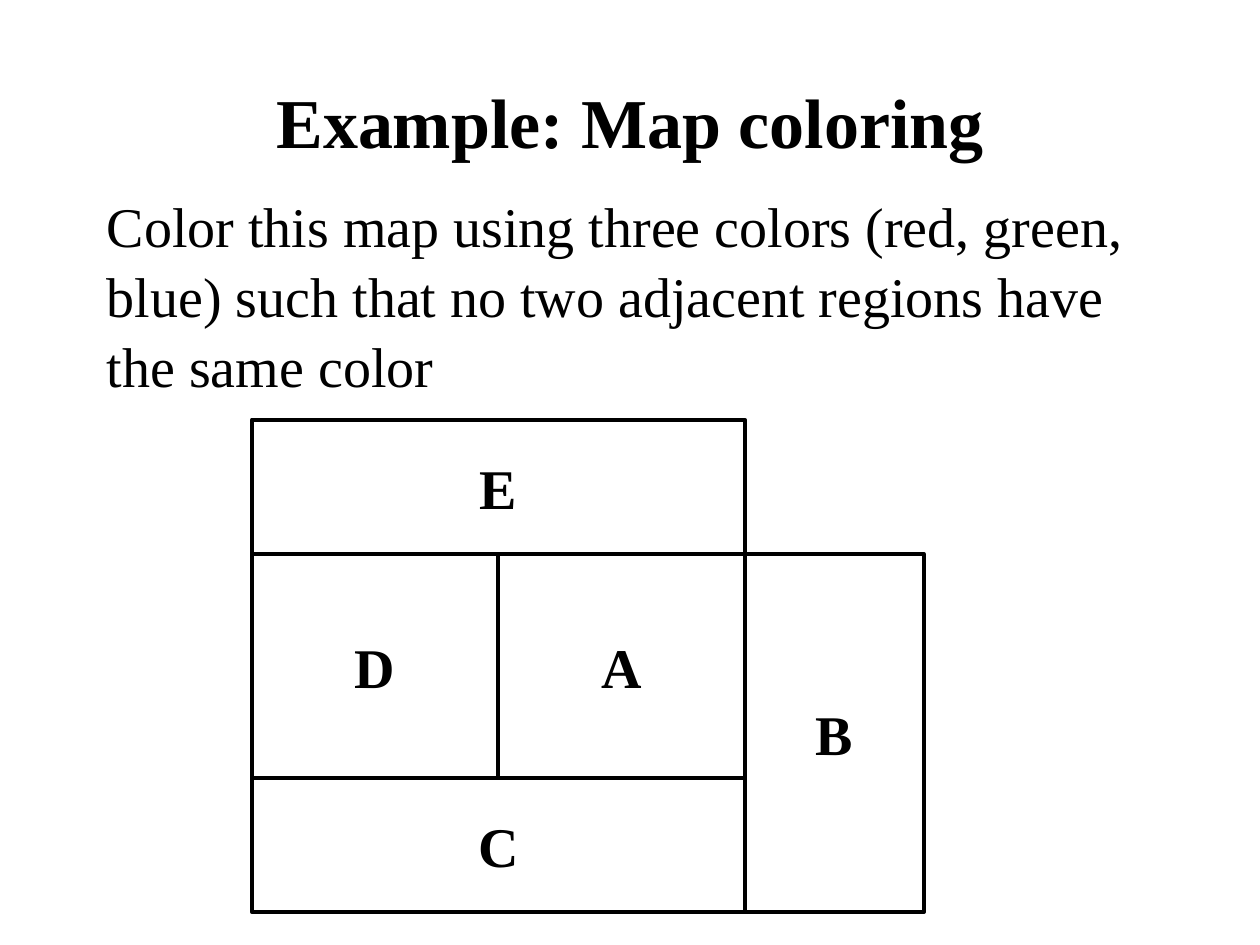
"""Build a slide that poses the map coloring problem."""
import pptx
import pptx.dml.color
import pptx.enum.shapes
import pptx.enum.text
import pptx.util

INK = "000000"
FACE = "Times New Roman"
UNIT = 3.91 / 11
LEFT, TOP = 2, 3.33
REGIONS = [
    ("E", 0, 0, 11, 3),
    ("D", 0, 3, 5.5, 5),
    ("A", 5.5, 3, 5.5, 5),
    ("C", 0, 8, 11, 3),
    ("B", 11, 3, 4, 8),
]


def color(code):
    """Return the color for a hex string."""
    return pptx.dml.color.RGBColor.from_string(code)


def inches(*sizes):
    """Return the sizes as a list of lengths."""
    return [pptx.util.Inches(size) for size in sizes]


def write(shape, text, size, bold=False, center=False):
    """Put one styled paragraph in a shape and return it."""
    frame = shape.text_frame
    frame.text = text
    para = frame.paragraphs[0]
    para.font.name = FACE
    para.font.size = pptx.util.Pt(size)
    para.font.bold = bold
    para.font.color.rgb = color(INK)
    align = pptx.enum.text.PP_ALIGN
    para.alignment = align.CENTER if center else align.LEFT
    if center:
        frame.vertical_anchor = pptx.enum.text.MSO_ANCHOR.MIDDLE
    return para


def add_text(slide, box, text, size, **style):
    """Add a wrapped text box and return its paragraph."""
    shape = slide.shapes.add_textbox(*inches(*box))
    shape.text_frame.word_wrap = True
    return write(shape, text, size, **style)


def add_region(group, name, col, row, wide, high):
    """Add one named map region, measured in grid units."""
    box = inches(LEFT + col * UNIT, TOP + row * UNIT, wide * UNIT, high * UNIT)
    kind = pptx.enum.shapes.MSO_SHAPE.RECTANGLE
    shape = group.shapes.add_shape(kind, *box)
    shape.shadow.inherit = False
    shape.fill.background()
    shape.line.color.rgb = color(INK)
    shape.line.width = pptx.util.Pt(2.25)
    write(shape, name, 32, bold=True, center=True)
    shape.text_frame.word_wrap = False


def main():
    """Build and save the slide."""
    deck = pptx.Presentation()
    deck.slide_width, deck.slide_height = inches(10, 7.5)
    slide = deck.slides.add_slide(deck.slide_layouts[6])
    add_text(slide, (0.75, 0.33, 8.5, 1.25), "Example: Map coloring", 40,
             bold=True, center=True)
    task = add_text(
        slide, (0.75, 1.45, 8.5, 1.83),
        "Color this map using three colors (red, green, blue) such that "
        "no two adjacent regions have the same color", 32)
    task.line_spacing = 1.04
    group = slide.shapes.add_group_shape()
    for region in REGIONS:
        add_region(group, *region)
    deck.save("out.pptx")


if __name__ == "__main__":
    main()
